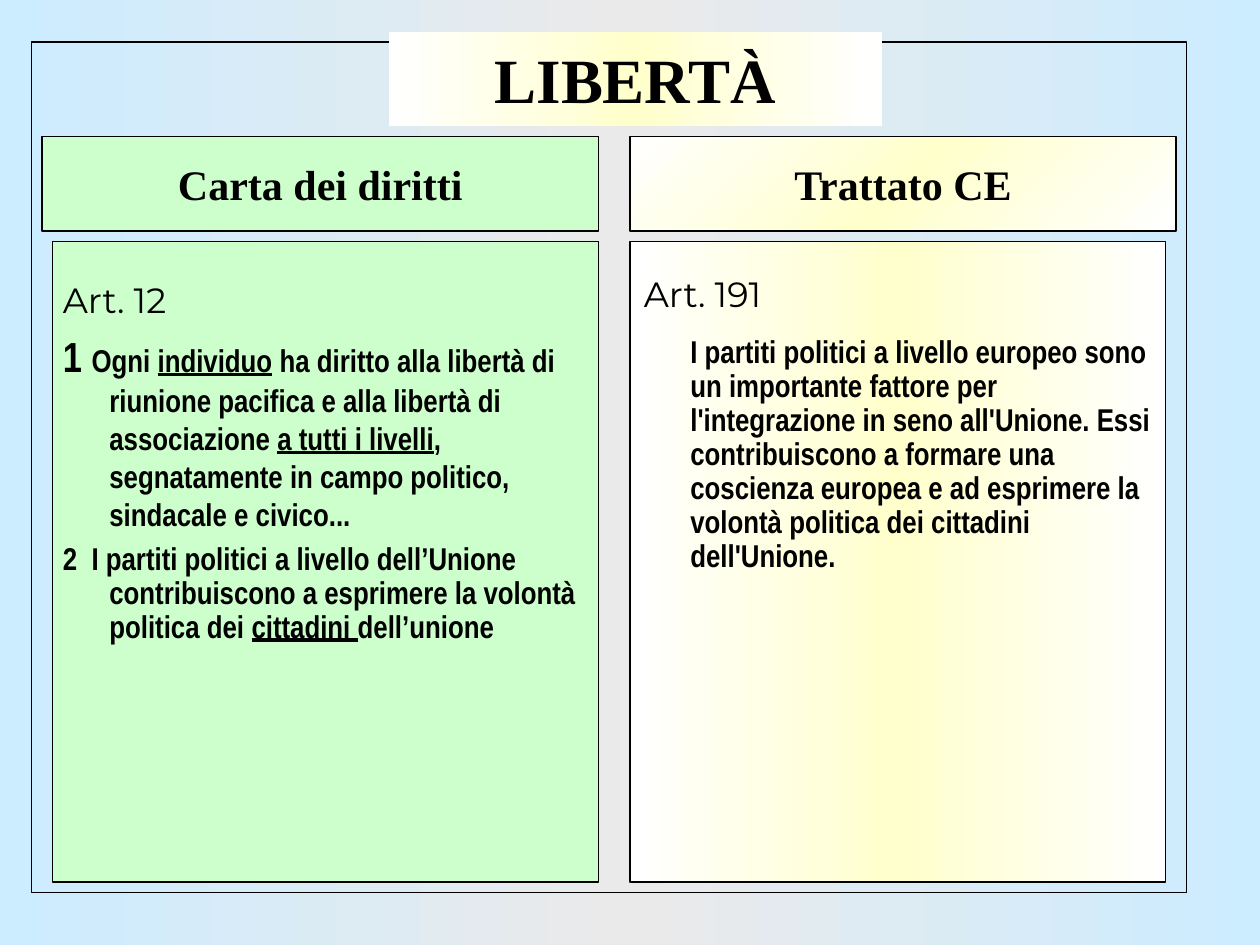
"""Build a slide comparing two texts on political liberty."""
from copy import deepcopy

from pptx import Presentation
from pptx.dml.color import RGBColor
from pptx.enum.shapes import MSO_SHAPE as Kind
from pptx.enum.text import MSO_ANCHOR as Anchor, MSO_AUTO_SIZE as Auto, PP_ALIGN as Align
from pptx.oxml.ns import qn
from pptx.util import Pt

BLACK = RGBColor(0x00, 0x00, 0x00)
WHITE = RGBColor(0xFF, 0xFF, 0xFF)
CREAM = RGBColor(0xFF, 0xFF, 0xCC)
GREEN = RGBColor(0xCC, 0xFF, 0xCC)
SKY = RGBColor(0xCC, 0xEC, 0xFF)
GREY = RGBColor(0xEA, 0xEA, 0xEA)

SERIF = "Times New Roman"
SANS = "Montserrat"
SLIM = "Arial Narrow"

LEFT = [
    (6, 1, -26.6, [("Art. 12", SANS, 20, False)]),
    (6, 1, -26.6, [
        ("1 ", SLIM, 24, False),
        ("Ogni ", SLIM, 18, False),
        ("individuo", SLIM, 18, True),
        (" ha diritto alla libertà di riunione pacifica e alla libertà di associazione ",
         SLIM, 18, False),
        ("a tutti i livelli", SLIM, 18, True),
        (", segnatamente in campo politico, sindacale e civico...", SLIM, 18, False),
    ]),
    (6, 0.9, -26.6, [
        ("2  I partiti politici a livello dell’Unione contribuiscono a esprimere "
         "la volontà politica dei ", SLIM, 18, False),
        ("cittadini ", SLIM, 18, True),
        ("dell’unione", SLIM, 18, False),
    ]),
]
RIGHT = [
    (6, 1.1, -26.6, [("Art. 191", SANS, 20, False)]),
    (12, 0.9, 0, [
        ("I partiti politici a livello europeo sono un importante fattore per "
         "l'integrazione in seno all'Unione. Essi contribuiscono a formare una "
         "coscienza europea e ad esprimere la volontà politica dei cittadini "
         "dell'Unione.", SLIM, 18, False),
    ]),
]


def blend(fill, host, edge, mid, angle=180):
    """Fill with a gradient that runs from edge to mid and back."""
    fill.gradient()
    fill.gradient_angle = angle
    stops = host.find(".//" + qn("a:gsLst"))
    stops.insert(1, deepcopy(stops[0]))
    for stop, color, place in zip(fill.gradient_stops, (edge, mid, edge), (0, 0.5, 1)):
        stop.color.rgb = color
        stop.position = place


def style(run, font, size, bold, under=False):
    """Set the font of one run."""
    face = run.font
    face.name, face.size, face.bold = font, Pt(size), bold
    face.underline = under
    face.color.rgb = BLACK


def label(shape, text, size):
    """Put a centred bold heading in a shape."""
    frame = shape.text_frame
    frame.text = text
    frame.auto_size = Auto.NONE
    frame.vertical_anchor = Anchor.MIDDLE
    para = frame.paragraphs[0]
    para.alignment = Align.CENTER
    style(para.runs[0], SERIF, size, True)


def panel(slide, box, width=0.75):
    """Add a black outlined rectangle without fill."""
    shape = slide.shapes.add_shape(Kind.RECTANGLE, *map(Pt, box))
    shape.shadow.inherit = False
    shape.fill.background()
    shape.line.color.rgb = BLACK
    shape.line.width = Pt(width)
    return shape


def green(slide, box):
    """Add a green panel."""
    shape = panel(slide, box)
    shape.fill.solid()
    shape.fill.fore_color.rgb = GREEN
    return shape


def cream(slide, box, angle=180):
    """Add a panel that fades from white to cream and back."""
    shape = panel(slide, box)
    blend(shape.fill, shape.element, WHITE, CREAM, angle)
    return shape


def prose(slide, box, paras):
    """Add a text box with hanging paragraphs."""
    frame = slide.shapes.add_textbox(*map(Pt, box)).text_frame
    frame.word_wrap = True
    for count, (before, lines, hang, parts) in enumerate(paras):
        para = frame.add_paragraph() if count else frame.paragraphs[0]
        para.space_before = Pt(before)
        para.line_spacing = lines
        props = para._p.get_or_add_pPr()
        props.set("marL", str(Pt(27.4)))
        props.set("indent", str(Pt(hang)))
        for text, font, size, under in parts:
            run = para.add_run()
            run.text = text
            style(run, font, size, font == SLIM, under)


def head(slide, box):
    """Move and format the title placeholder."""
    title = slide.shapes.title
    title.left, title.top, title.width, title.height = map(Pt, box)
    blend(title.fill, title.element, WHITE, CREAM)
    label(title, "LIBERTÀ", 36)
    return title


def main():
    """Build and save the slide."""
    deck = Presentation()
    deck.slide_width, deck.slide_height = Pt(720), Pt(540)
    slide = deck.slides.add_slide(deck.slide_layouts[5])
    blend(slide.background.fill, slide.element, SKY, GREY)

    cream(slide, (360, 138, 306, 366))
    green(slide, (30, 138, 312, 366))
    border = panel(slide, (18, 24, 660, 486), 1)
    title = head(slide, (222, 18, 282, 54))
    border.element.addnext(title.element)

    prose(slide, (28, 155.5, 312, 354), LEFT)
    prose(slide, (360, 150, 306, 306), RIGHT)
    label(green(slide, (24, 78, 318, 54)), "Carta dei diritti", 24)
    label(cream(slide, (360, 78, 312, 54), 135), "Trattato CE", 24)
    deck.save("out.pptx")


if __name__ == "__main__":
    main()
